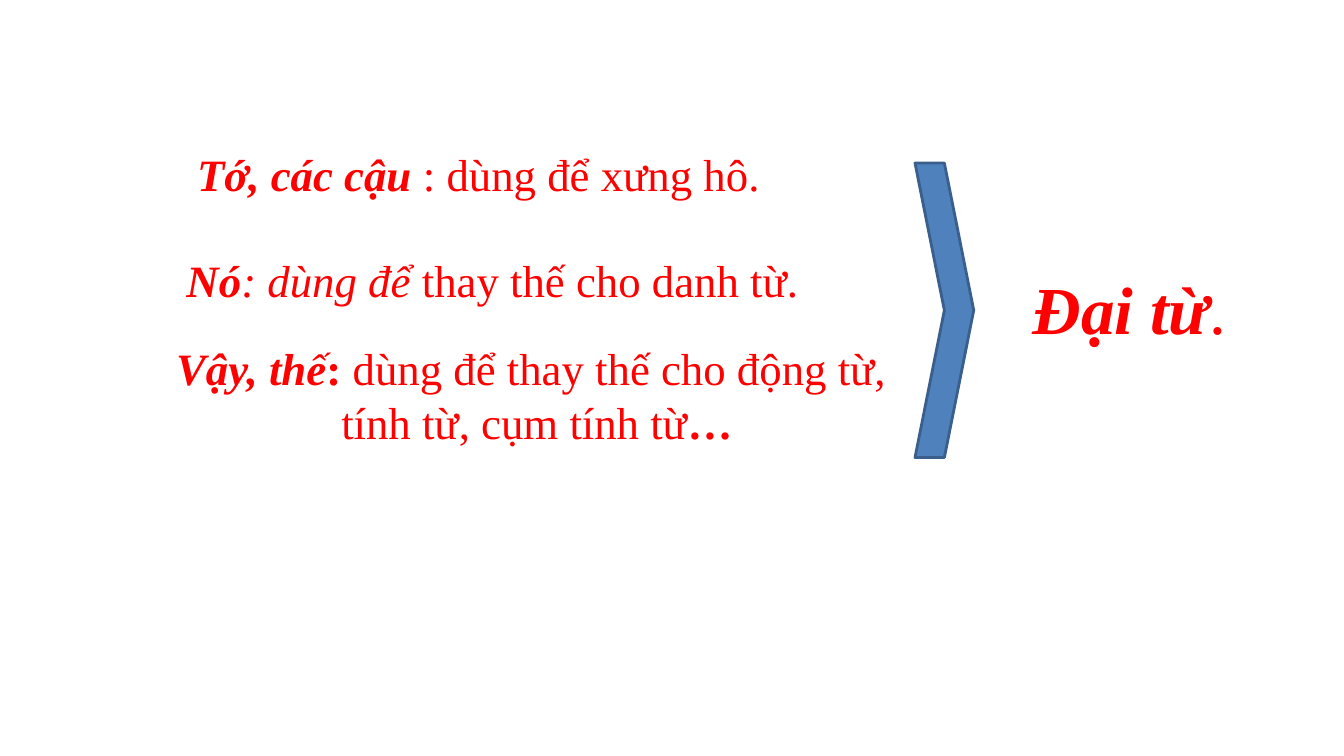
from dataclasses import dataclass

from pptx import Presentation
from pptx.dml.color import RGBColor
from pptx.enum.shapes import MSO_SHAPE
from pptx.enum.text import MSO_ANCHOR, PP_ALIGN
from pptx.util import Cm, Pt


@dataclass(frozen=True)
class Theme:
    font: str = "Times New Roman"
    red: RGBColor = RGBColor(0xFF, 0x00, 0x00)
    white: RGBColor = RGBColor(0xFF, 0xFF, 0xFF)
    blue: RGBColor = RGBColor(0x4F, 0x81, 0xBD)
    outline: RGBColor = RGBColor(0x3A, 0x5F, 0x8C)
    body: Pt = Pt(32)
    conclusion: Pt = Pt(48)


THEME = Theme()


def add_statement(slide, place, lines, size=THEME.body, align=PP_ALIGN.CENTER, filled=True):
    """Each line is a list of (words, style); style holds "b" for bold, "i" for italic."""
    statement = slide.shapes.add_textbox(*map(Cm, place))
    if filled:
        statement.fill.solid()
        statement.fill.fore_color.rgb = THEME.white
    frame = statement.text_frame
    frame.word_wrap = True
    frame.vertical_anchor = MSO_ANCHOR.MIDDLE
    for number, line in enumerate(lines):
        paragraph = frame.add_paragraph() if number else frame.paragraphs[0]
        paragraph.alignment = align
        paragraph.font.name = THEME.font
        paragraph.font.size = size
        paragraph.font.color.rgb = THEME.red
        for words, style in line:
            run = paragraph.add_run()
            run.text = words
            run.font.bold = "b" in style
            run.font.italic = "i" in style


def add_chevron(slide, place):
    chevron = slide.shapes.add_shape(MSO_SHAPE.CHEVRON, *map(Cm, place))
    chevron.shadow.inherit = False
    chevron.fill.solid()
    chevron.fill.fore_color.rgb = THEME.blue
    chevron.line.color.rgb = THEME.outline
    chevron.line.width = Pt(2)


def main():
    presentation = Presentation()
    presentation.slide_width = Cm(33.87)
    presentation.slide_height = Cm(19.05)
    slide = presentation.slides.add_slide(presentation.slide_layouts[6])

    add_statement(slide, (2.75, 3.53, 18.62, 1.7),
                  [[("Tớ, các cậu ", "bi"), (": dùng để xưng hô.", "")]])
    add_statement(slide, (4.45, 6.2, 23.7, 1.7),
                  [[("Nó", "bi"), (": dùng để ", "i"), ("thay thế cho danh từ.", "")]],
                  align=PP_ALIGN.JUSTIFY, filled=False)
    add_statement(slide, (2.75, 7.82, 21.56, 4.24),
                  [[("Vậy, thế", "bi"), (": ", "b"), ("dùng để thay thế cho động từ, ", "")],
                   [("tính từ, cụm tính từ", ""), ("…", "b")]])
    add_chevron(slide, (23.06, 4.11, 1.48, 7.42))
    add_statement(slide, (24.97, 7.04, 6.99, 1.45),
                  [[("Đại từ", "bi"), (".", "")]], size=THEME.conclusion)

    presentation.save("out.pptx")


if __name__ == "__main__":
    main()
